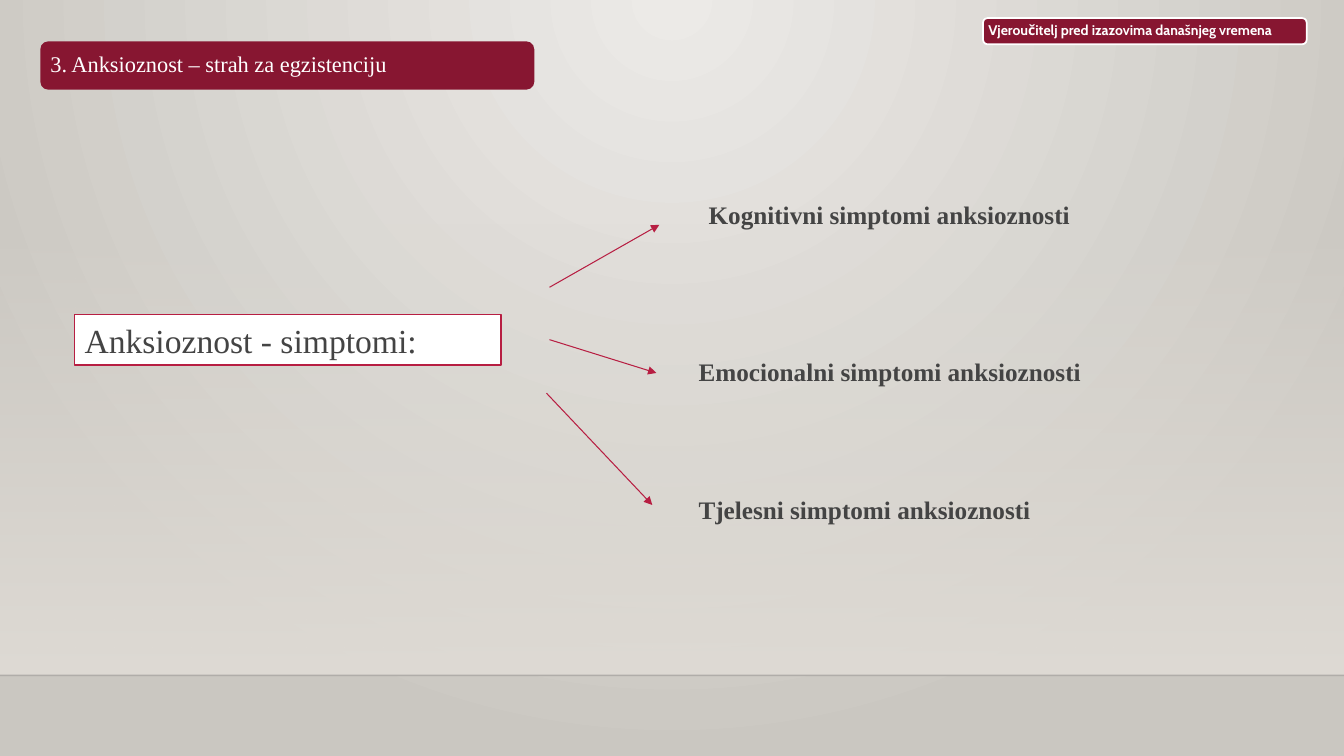
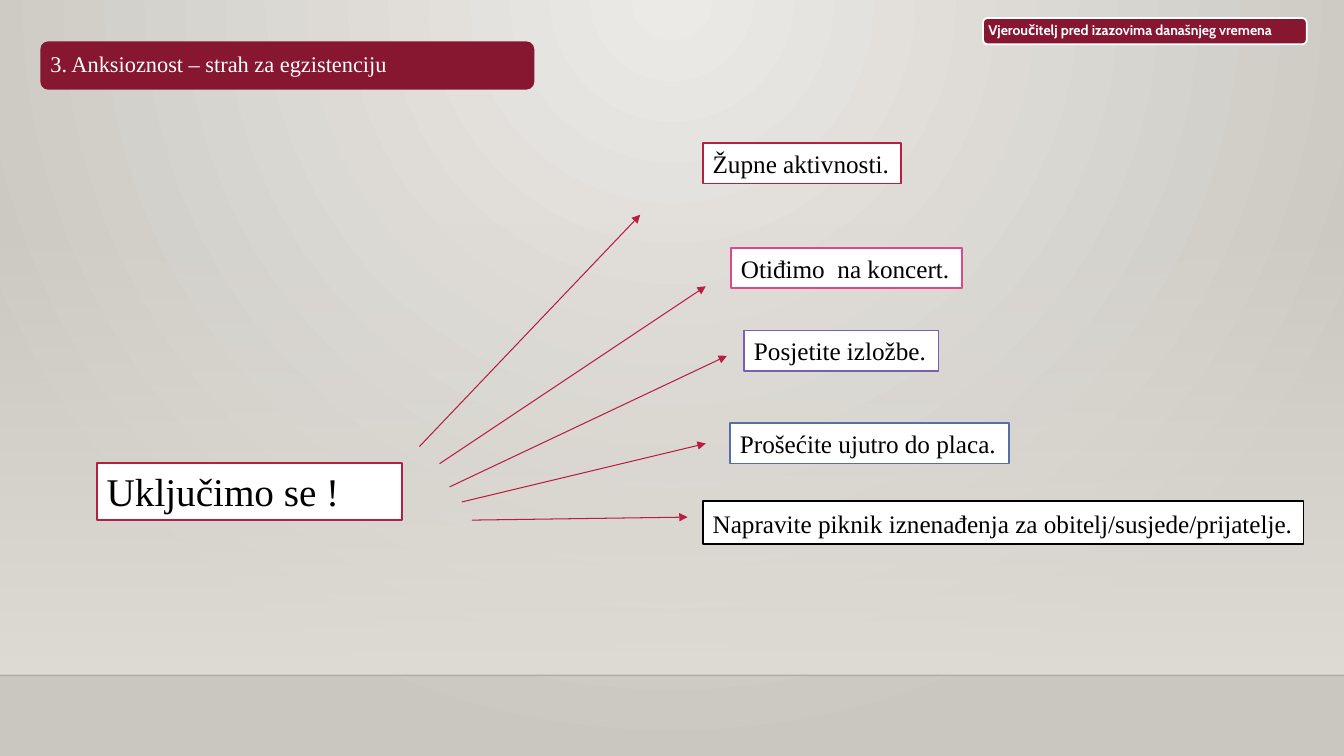
import pptx
import pptx.util
import pptx.dml.color
import pptx.enum.dml
import pptx.enum.shapes
import pptx.enum.text
import pptx.oxml
import pptx.oxml.ns

Inches, Pt = pptx.util.Inches, pptx.util.Pt
SHAPE = pptx.enum.shapes.MSO_SHAPE
ANCHOR = pptx.enum.text.MSO_ANCHOR
LEFT = pptx.enum.text.PP_ALIGN.LEFT

WIDTH, HEIGHT = 13.33, 7.5
FLOOR_TOP, GLOW_TOP = 6.7, 2.21
CRIMSON, WINE, GREY = "B71E42", "871631", "444444"
BLACK, WHITE = "000000", "FFFFFF"
SERIF = "Times New Roman"

TITLE = "3. Anksioznost – strah za egzistenciju"
TAG = "Vjeroučitelj pred izazovima današnjeg vremena"
TITLE_BAND = (0.4, 0.41, 4.9, 0.48)
TITLE_BOX = (0.43, 0.43, 4.85, 0.43)
TAG_BOX = (9.75, 0.18, 3.21, 0.26)

SYMPTOM = dict(size=18, colour=GREY, bold=True)
OPTION = dict(size=18, colour=BLACK, fill=WHITE, wrap=False)

SLIDES = [
    {
        "boxes": [
            ("Anksioznost - simptomi:", (0.74, 3.12, 4.23, 0.5),
             dict(size=24, colour=GREY, fill=WHITE, line=CRIMSON)),
            ("Kognitivni simptomi anksioznosti", (6.93, 1.93, 3.88, 0.4), SYMPTOM),
            ("Emocionalni simptomi anksioznosti", (6.83, 3.49, 4.09, 0.4), SYMPTOM),
            ("Tjelesni simptomi anksioznosti", (6.83, 4.85, 3.59, 0.4), SYMPTOM),
        ],
        "arrows": [
            (5.45, 2.85, 6.54, 2.23),
            (5.45, 3.37, 6.51, 3.7),
            (5.42, 3.9, 6.47, 5.01),
        ],
    },
    {
        "boxes": [
            ("Župne aktivnosti.", (6.97, 1.42, 1.97, 0.4), OPTION | dict(line=CRIMSON)),
            ("Otiđimo  na koncert.", (7.25, 2.46, 2.29, 0.4), OPTION | dict(line="DE478E")),
            ("Posjetite izložbe.", (7.38, 3.28, 1.93, 0.4), OPTION | dict(line="795FAF")),
            ("Prošećite ujutro do placa.", (7.24, 4.2, 2.77, 0.4), OPTION | dict(line="586EA6")),
            ("Napravite piknik iznenađenja za obitelj/susjede/prijatelje.",
             (6.97, 4.97, 5.96, 0.43), OPTION | dict(line=BLACK, spacing=1.07)),
            ("Uključimo se !", (0.96, 4.59, 3.03, 0.57),
             dict(size=28, colour=BLACK, fill=WHITE, line=CRIMSON)),
        ],
        "arrows": [
            (4.16, 4.43, 6.35, 2.13),
            (4.36, 4.6, 7, 2.84),
            (4.46, 4.83, 7.21, 3.53),
            (4.58, 4.98, 7, 4.4),
            (4.68, 5.16, 6.82, 5.13),
        ],
    },
]


def rgb(value):
    return pptx.dml.color.RGBColor.from_string(value)


def assign(obj, **values):
    for name, value in values.items():
        setattr(obj, name, value)


def add_xml(parent, tag, **attrs):
    el = pptx.oxml.ns.qn(tag)
    child = parent.makeelement(el, attrs)
    parent.append(child)
    return child


def place(sp, at):
    assign(sp, **dict(zip(("left", "top", "width", "height"), map(Inches, at))))


def write(sp, text, size, colour, font=SERIF, bold=False, wrap=True,
          spacing=1.0, inset=None, anchor=ANCHOR.TOP):
    tf = sp.text_frame
    tf.text = text
    assign(tf, word_wrap=wrap, vertical_anchor=anchor,
           auto_size=pptx.enum.text.MSO_AUTO_SIZE.NONE)
    if inset is not None:
        assign(tf, **{f"margin_{side}": Inches(inset)
                      for side in ("left", "top", "right", "bottom")})
    p = tf.paragraphs[0]
    assign(p, alignment=LEFT, line_spacing=spacing)
    r = p.runs[0]
    assign(r.font, name=font, size=Pt(size), bold=bold)
    r.font.color.rgb = rgb(colour)


def add_panel(s, at, kind=SHAPE.RECTANGLE, fill=None, line=None):
    sp = s.shapes.add_shape(kind, *map(Inches, at))
    sp.shadow.inherit = False
    if fill:
        sp.fill.solid()
        sp.fill.fore_color.rgb = rgb(fill)
    else:
        sp.fill.background()
    if line:
        sp.line.color.rgb = rgb(line)
        sp.line.width = Pt(1.25)
    else:
        sp.line.fill.background()
    return sp


def add_box(s, text, at, fill=None, line=None, **style):
    if fill:
        sp = add_panel(s, at, fill=fill, line=line)
    else:
        sp = s.shapes.add_textbox(*map(Inches, at))
    write(sp, text, **style)


def add_line(s, ends, colour, width):
    cn = s.shapes.add_connector(pptx.enum.shapes.MSO_CONNECTOR.STRAIGHT, *map(Inches, ends))
    cn.line.color.rgb = rgb(colour)
    cn.line.width = Pt(width)
    add_xml(cn.element.spPr, "a:effectLst")
    return cn


def add_arrow(s, ends):
    cn = add_line(s, ends, CRIMSON, 0.75)
    add_xml(cn.line.fill and cn.element.spPr.find(pptx.oxml.ns.qn("a:ln")),
            "a:tailEnd", type="triangle")


def set_gradient(fill, colours):
    fill.gradient()
    for stop, colour in zip(fill.gradient_stops, colours):
        stop.color.rgb = rgb(colour)


def set_alpha(colour_el, percent):
    add_xml(colour_el, "a:alpha", val=str(percent * 1000))


def style_background(layout):
    set_gradient(layout.background.fill, ("ECEAE7", "CAC7C1"))
    grad = layout.element.xpath(".//p:bg//a:gradFill")[0]
    lin = grad.find(pptx.oxml.ns.qn("a:lin"))
    centre = add_xml(grad, "a:path", path="circle")
    add_xml(centre, "a:fillToRect", l="43000", t="0", r="43000", b="100000")
    grad.remove(lin)


def move_to_layout(layout, shapes):
    for number, sp in enumerate(shapes, start=20):
        sp.element.xpath(".//p:cNvPr")[0].set("id", str(number))
        layout.shapes.element.append(sp.element)


def build_layout(layout, s):
    style_background(layout)
    glow = add_panel(s, (0, GLOW_TOP, WIDTH, FLOOR_TOP - GLOW_TOP))
    set_gradient(glow.fill, ("DFDBD5", "DFDBD5"))
    glow.fill.gradient_angle = 270
    set_alpha(glow.element.xpath(".//a:gs/a:srgbClr")[0], 0)
    floor = add_line(s, (0, FLOOR_TOP, WIDTH, FLOOR_TOP), "000001", 1)
    set_alpha(floor.element.xpath(".//a:ln//a:srgbClr")[0], 20)
    band = add_panel(s, TITLE_BAND, SHAPE.ROUNDED_RECTANGLE, WINE)
    move_to_layout(layout, (glow, floor, band))


def fill_slide(s, boxes, arrows):
    title = s.shapes.title
    place(title, TITLE_BOX)
    write(title, TITLE, 16, WHITE, spacing=0.9, inset=0.07, anchor=ANCHOR.MIDDLE)
    for text, at, style in boxes:
        add_box(s, text, at, **style)
    for ends in arrows:
        add_arrow(s, ends)
    tag = add_panel(s, TAG_BOX, SHAPE.ROUNDED_RECTANGLE, WINE, WHITE)
    write(tag, TAG, 10, WHITE, font="Cabin", bold=True, spacing=0.9,
          inset=0.04, anchor=ANCHOR.MIDDLE)


def main():
    prs = pptx.Presentation()
    assign(prs, slide_width=Inches(WIDTH), slide_height=Inches(HEIGHT))
    layout = prs.slide_layouts[5]
    slides = [prs.slides.add_slide(layout) for _ in SLIDES]
    build_layout(layout, slides[0])
    for s, content in zip(slides, SLIDES):
        fill_slide(s, **content)
    prs.save("out.pptx")


if __name__ == "__main__":
    main()
